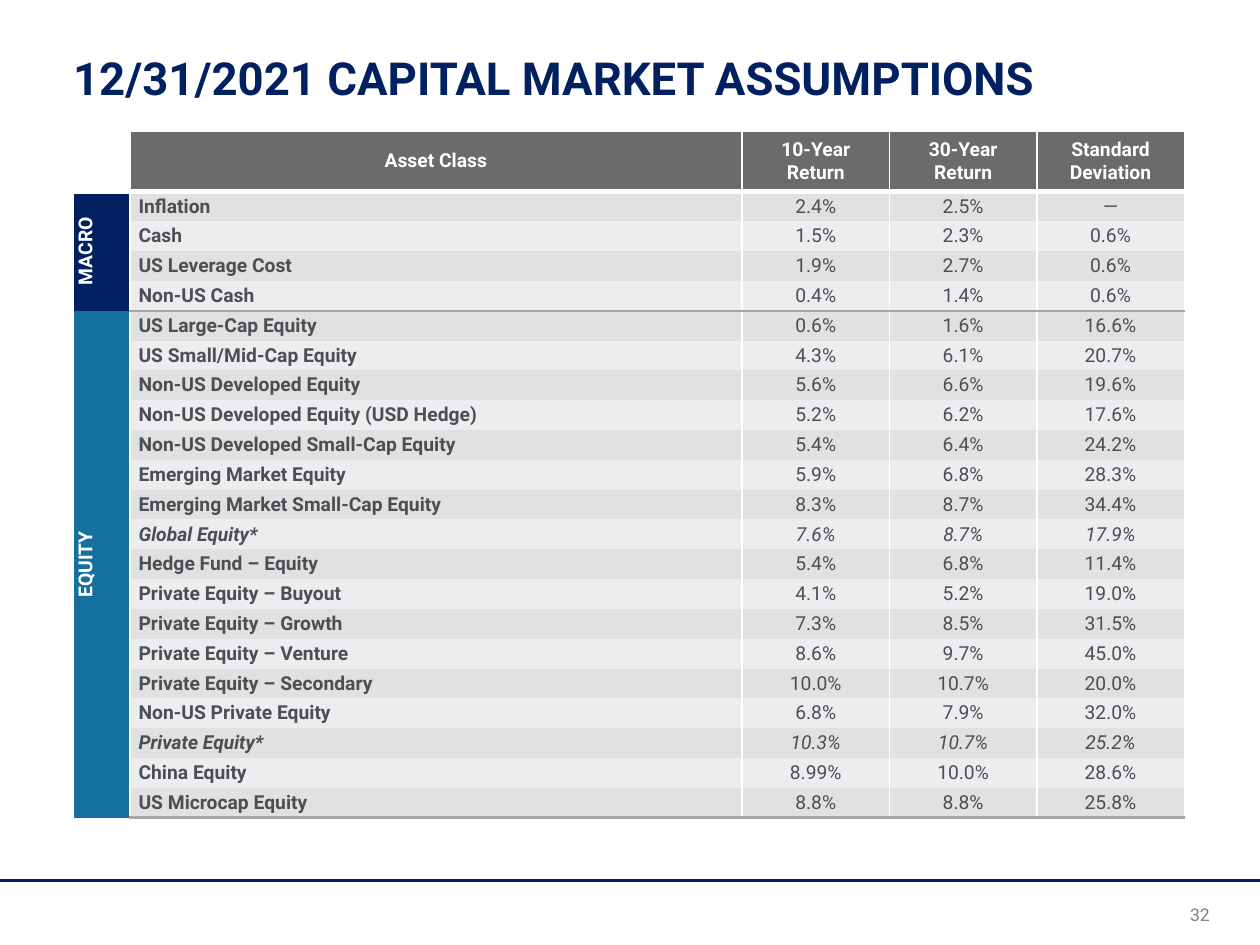
from lxml import etree
from pptx import Presentation
from pptx.dml.color import RGBColor
from pptx.enum import shapes, text
from pptx.oxml import ns
from pptx.util import Inches, Pt

NAVY = RGBColor(0x00, 0x20, 0x60)
BLUE = RGBColor(0x16, 0x70, 0x9E)
WHITE = RGBColor(0xFF, 0xFF, 0xFF)
HEADER_GRAY = RGBColor(0x6B, 0x6B, 0x6B)
RULE_GRAY = RGBColor(0xA6, 0xA6, 0xA6)
PAGE_GRAY = RGBColor(0x80, 0x80, 0x80)
INK = RGBColor(0x4D, 0x4E, 0x54)
BANDS = (RGBColor(0xE1, 0xE1, 0xE1), RGBColor(0xED, 0xED, 0xEF))
FONT = "Roboto"

TITLE = "12/31/2021 CAPITAL MARKET ASSUMPTIONS"
PAGE_NUMBER = "32"
HEADERS = ["Asset Class", "10-Year\vReturn", "30-Year\vReturn", "Standard Deviation"]
# Asset classes ending in * are blends, set in italics.
GROUPS = [
    ("MACRO", NAVY, [
        ("Inflation", "2.4%", "2.5%", "—"),
        ("Cash", "1.5%", "2.3%", "0.6%"),
        ("US Leverage Cost", "1.9%", "2.7%", "0.6%"),
        ("Non-US Cash", "0.4%", "1.4%", "0.6%"),
    ]),
    ("EQUITY", BLUE, [
        ("US Large-Cap Equity", "0.6%", "1.6%", "16.6%"),
        ("US Small/Mid-Cap Equity", "4.3%", "6.1%", "20.7%"),
        ("Non-US Developed Equity", "5.6%", "6.6%", "19.6%"),
        ("Non-US Developed Equity (USD Hedge)", "5.2%", "6.2%", "17.6%"),
        ("Non-US Developed Small-Cap Equity", "5.4%", "6.4%", "24.2%"),
        ("Emerging Market Equity", "5.9%", "6.8%", "28.3%"),
        ("Emerging Market Small-Cap Equity", "8.3%", "8.7%", "34.4%"),
        ("Global Equity*", "7.6%", "8.7%", "17.9%"),
        ("Hedge Fund – Equity", "5.4%", "6.8%", "11.4%"),
        ("Private Equity – Buyout", "4.1%", "5.2%", "19.0%"),
        ("Private Equity – Growth", "7.3%", "8.5%", "31.5%"),
        ("Private Equity – Venture", "8.6%", "9.7%", "45.0%"),
        ("Private Equity – Secondary", "10.0%", "10.7%", "20.0%"),
        ("Non-US Private Equity", "6.8%", "7.9%", "32.0%"),
        ("Private Equity*", "10.3%", "10.7%", "25.2%"),
        ("China Equity", "8.99%", "10.0%", "28.6%"),
        ("US Microcap Equity", "8.8%", "8.8%", "25.8%"),
    ]),
]

COLUMN_WIDTHS = [0.45, 4.86, 1.17, 1.17, 1.17]
LEFT, TABLE_TOP, TABLE_WIDTH, TABLE_HEIGHT = 0.58, 1.04, 8.83, 5.45
HEADER_HEIGHT = 0.48

HAIRLINE = (WHITE, 1)
HEADER_RULE = (WHITE, 3)
GROUP_RULE = (RULE_GRAY, 1.5)


def set_borders(cell, top=None, bottom=None):
    """White side borders, plus (colour, points) above and below, or none."""
    properties = cell._tc.get_or_add_tcPr()
    for side, rule in zip("LRTB", (HAIRLINE, HAIRLINE, top, bottom)):
        edge = etree.SubElement(properties, ns.qn(f"a:ln{side}"))
        if rule is None:
            etree.SubElement(edge, ns.qn("a:noFill"))
            continue
        color, points = rule
        edge.set("w", str(Pt(points)))
        fill = etree.SubElement(edge, ns.qn("a:solidFill"))
        etree.SubElement(fill, ns.qn("a:srgbClr"), val=str(color))


def format_text(paragraph, size, color, bold=False, italic=False, align=text.PP_ALIGN.CENTER):
    paragraph.alignment = align
    font = paragraph.font
    for run in paragraph.runs:
        font = run.font
        font.name, font.size, font.bold, font.italic = FONT, Pt(size), bold, italic
        font.color.rgb = color


def fill_cell(cell, words, fill, color, side_margin=0, **style):
    cell.text_frame.text = words
    cell.vertical_anchor = text.MSO_ANCHOR.MIDDLE
    cell.margin_top = cell.margin_bottom = 0
    cell.margin_left = cell.margin_right = Inches(side_margin)
    cell.fill.solid()
    cell.fill.fore_color.rgb = fill
    format_text(cell.text_frame.paragraphs[0], 11, color, **style)


def add_assumptions(slide):
    row_count = 1 + sum(len(rows) for _, _, rows in GROUPS)
    table = slide.shapes.add_table(
        row_count, len(COLUMN_WIDTHS), Inches(LEFT), Inches(TABLE_TOP),
        Inches(TABLE_WIDTH), Inches(TABLE_HEIGHT)).table
    table.first_row = table.horz_banding = False
    for column, width in zip(table.columns, COLUMN_WIDTHS):
        column.width = Inches(width)
    for row in table.rows:
        row.height = Inches((TABLE_HEIGHT - HEADER_HEIGHT) / (row_count - 1))
    table.rows[0].height = Inches(HEADER_HEIGHT)

    for c in range(len(COLUMN_WIDTHS)):
        set_borders(table.cell(0, c), HAIRLINE, HEADER_RULE)
    table.cell(0, 0).fill.background()
    for c, header in enumerate(HEADERS, 1):
        fill_cell(table.cell(0, c), header, HEADER_GRAY, WHITE, 0.04, bold=True)

    first, top_rule = 1, HEADER_RULE
    for group, group_color, rows in GROUPS:
        last = first + len(rows) - 1
        for r, values in enumerate(rows, first):
            band = BANDS[(r - 1) % 2]
            italic = values[0].endswith("*")
            for c in range(len(COLUMN_WIDTHS)):
                set_borders(table.cell(r, c), top_rule if r == first else None,
                            GROUP_RULE if r == last else None)
            fill_cell(table.cell(r, 1), values[0], band, INK, 0.07, bold=True,
                      italic=italic, align=text.PP_ALIGN.LEFT)
            for c, value in enumerate(values[1:], 2):
                fill_cell(table.cell(r, c), value, band, INK, italic=italic)
        label = table.cell(first, 0)
        label.merge(table.cell(last, 0))
        fill_cell(label, group, group_color, WHITE, 0.05, bold=True)
        label.text_frame.paragraphs[0].line_spacing = 1.07
        label._tc.get_or_add_tcPr().set("vert", "vert270")
        first, top_rule = last + 1, GROUP_RULE


def add_title(slide):
    title = slide.shapes.title
    title.left, title.top = Inches(LEFT), Inches(0.01)
    title.width, title.height = Inches(TABLE_WIDTH), Inches(0.82)
    frame = title.text_frame
    frame.text = TITLE
    frame.auto_size = text.MSO_AUTO_SIZE.NONE
    frame.vertical_anchor = text.MSO_ANCHOR.BOTTOM
    frame.margin_left = frame.margin_right = frame.margin_bottom = 0
    frame.margin_top = Inches(0.05)
    frame.paragraphs[0].line_spacing = Pt(27)
    format_text(frame.paragraphs[0], 26, NAVY, bold=True, align=text.PP_ALIGN.LEFT)


def add_footer(slide, slide_width):
    y = Inches(6.99)
    rule = slide.shapes.add_connector(shapes.MSO_CONNECTOR.STRAIGHT, 0, y, slide_width, y)
    rule.line.color.rgb = NAVY
    rule.line.width = Pt(1.5)
    etree.SubElement(rule._element.spPr, ns.qn("a:effectLst"))

    page = slide.shapes.add_textbox(Inches(8.75), Inches(7.1), Inches(0.85), Inches(0.24))
    frame = page.text_frame
    frame.word_wrap = True
    frame.vertical_anchor = text.MSO_ANCHOR.BOTTOM
    frame.margin_right = frame.margin_bottom = 0
    frame.text = PAGE_NUMBER
    format_text(frame.paragraphs[0], 10, PAGE_GRAY, align=text.PP_ALIGN.RIGHT)


def main():
    deck = Presentation()
    deck.slide_width, deck.slide_height = Inches(10), Inches(7.5)
    slide = deck.slides.add_slide(deck.slide_layouts[5])
    add_footer(slide, deck.slide_width)
    add_title(slide)
    add_assumptions(slide)
    deck.save("out.pptx")


if __name__ == "__main__":
    main()
